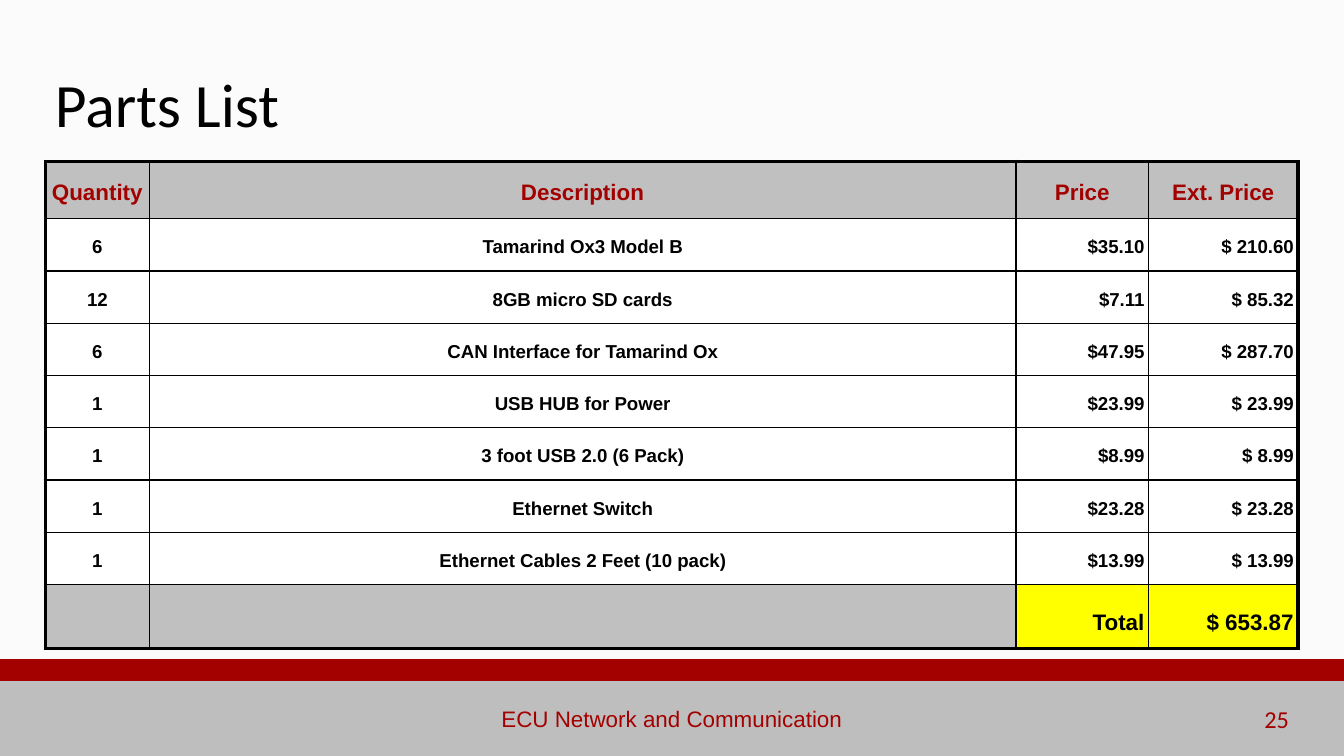
from dataclasses import dataclass

from lxml.etree import SubElement
from pptx import Presentation
from pptx.dml.color import RGBColor
from pptx.enum.shapes import MSO_SHAPE
from pptx.enum.text import MSO_ANCHOR, PP_ALIGN
from pptx.oxml.ns import qn
from pptx.util import Cm, Pt


@dataclass(frozen=True)
class Theme:
    background: str = "FBFBFB"
    red: str = "A30000"
    footer_gray: str = "BEBEBE"
    table_gray: str = "C0C0C0"
    white: str = "FFFFFF"
    yellow: str = "FFFF00"
    black: str = "000000"
    heading_font: str = "Calibri"
    body_font: str = "Arial"
    title_size: float = 33
    number_size: float = 13
    large_size: float = 12
    small_size: float = 10
    thin_line: float = 0.75
    thick_line: float = 2.25


class SlideBuilder:
    def __init__(self, page, theme):
        self.page = page
        self.theme = theme

    def background(self, color):
        fill = self.page.background.fill
        fill.solid()
        fill.fore_color.rgb = RGBColor.from_string(color)

    def band(self, top, height, color):
        """Draw a plain bar across the full slide width."""
        bar = self.page.shapes.add_shape(
            MSO_SHAPE.RECTANGLE, Cm(0), Cm(top), Cm(25.4), Cm(height))
        bar.shadow.inherit = False
        bar.fill.solid()
        bar.fill.fore_color.rgb = RGBColor.from_string(color)
        bar.line.fill.background()

    def style(self, para, font, size, color, align, spacing=1.0, bold=False):
        para.alignment = align
        para.line_spacing = spacing
        para.font.name = font
        para.font.size = Pt(size)
        para.font.bold = bold
        para.font.color.rgb = RGBColor.from_string(color)

    def text(self, words, left, top, width, height, font, size, color, align,
             anchor=MSO_ANCHOR.MIDDLE, inset=0.25, spacing=1.0):
        box = self.page.shapes.add_textbox(Cm(left), Cm(top), Cm(width), Cm(height))
        frame = box.text_frame
        frame.word_wrap = True
        frame.vertical_anchor = anchor
        frame.margin_left = frame.margin_right = Cm(inset)
        frame.margin_top = frame.margin_bottom = Cm(inset)
        frame.text = words
        self.style(frame.paragraphs[0], font, size, color, align, spacing)

    def borders(self, cell, heavy_sides):
        properties = cell._tc.get_or_add_tcPr()
        for side in "LRTB":
            width = self.theme.thick_line if side in heavy_sides else self.theme.thin_line
            line = SubElement(properties, qn(f"a:ln{side}"), w=str(Pt(width)))
            fill = SubElement(line, qn("a:solidFill"))
            SubElement(fill, qn("a:srgbClr"), val=self.theme.black)

    def cell(self, cell, words, fill, size, color, align, heavy_sides):
        self.borders(cell, heavy_sides)
        cell.fill.solid()
        cell.fill.fore_color.rgb = RGBColor.from_string(fill)
        if not words:
            return
        cell.vertical_anchor = MSO_ANCHOR.BOTTOM
        cell.margin_left = cell.margin_right = Cm(0.08)
        cell.margin_top = cell.margin_bottom = Cm(0.25)
        cell.text = words
        self.style(cell.text_frame.paragraphs[0], self.theme.body_font, size, color,
                   align, spacing=1.15, bold=True)

    def parts_table(self, records, left, top, widths, heights):
        """Build a table whose first record is the header and last the total."""
        theme = self.theme
        last_row, last_column = len(records) - 1, len(widths) - 1
        table = self.page.shapes.add_table(
            len(records), len(widths), Cm(left), Cm(top),
            Cm(sum(widths)), Cm(sum(heights))).table
        table.first_row = table.horz_banding = False
        for column, width in zip(table.columns, widths):
            column.width = Cm(width)
        for row, height in zip(table.rows, heights):
            row.height = Cm(height)

        for r, record in enumerate(records):
            header, total = r == 0, r == last_row
            size = theme.large_size if header or total else theme.small_size
            color = theme.red if header else theme.black
            for c, words in enumerate(record):
                money = c >= 2
                align = PP_ALIGN.RIGHT if money and not header else PP_ALIGN.CENTER
                if total and money:
                    fill = theme.yellow
                else:
                    fill = theme.table_gray if header or total else theme.white
                edges = {"L": c == 0, "R": c == last_column, "T": header, "B": total}
                heavy_sides = [side for side, outer in edges.items() if outer]
                self.cell(table.cell(r, c), words, fill, size, color, align, heavy_sides)


PARTS = [
    ("Quantity", "Description", "Price", "Ext. Price"),
    ("6", "Tamarind Ox3 Model B", "$35.10", "$ 210.60"),
    ("12", "8GB micro SD cards", "$7.11", "$ 85.32"),
    ("6", "CAN Interface for Tamarind Ox", "$47.95", "$ 287.70"),
    ("1", "USB HUB for Power", "$23.99", "$ 23.99"),
    ("1", "3 foot USB 2.0 (6 Pack)", "$8.99", "$ 8.99"),
    ("1", "Ethernet Switch", "$23.28", "$ 23.28"),
    ("1", "Ethernet Cables 2 Feet (10 pack)", "$13.99", "$ 13.99"),
    ("", "", "Total", "$ 653.87"),
]


def main():
    deck = Presentation()
    deck.slide_width, deck.slide_height = Cm(25.4), Cm(14.29)
    theme = Theme()
    builder = SlideBuilder(deck.slides.add_slide(deck.slide_layouts[6]), theme)

    builder.background(theme.background)
    builder.band(12.87, 1.42, theme.footer_gray)
    builder.band(12.46, 0.41, theme.red)
    builder.text("ECU Network and Communication", 8.46, 13.21, 8.48, 0.76,
                 theme.body_font, theme.large_size, theme.red, PP_ALIGN.CENTER)
    builder.text("Parts List", 0.86, 1.24, 23.67, 1.6, theme.heading_font,
                 theme.title_size, theme.black, PP_ALIGN.LEFT, inset=0.18, spacing=0.9)
    builder.text("25", 23.09, 13.06, 1.52, 1.09, theme.heading_font,
                 theme.number_size, theme.red, PP_ALIGN.RIGHT, anchor=MSO_ANCHOR.TOP)

    body_heights = [0.96] * (len(PARTS) - 2)
    builder.parts_table(PARTS, 0.86, 3.05, widths=[1.96, 16.38, 2.51, 2.82],
                        heights=[1.04, *body_heights, 1.21])
    deck.save("out.pptx")


if __name__ == "__main__":
    main()
